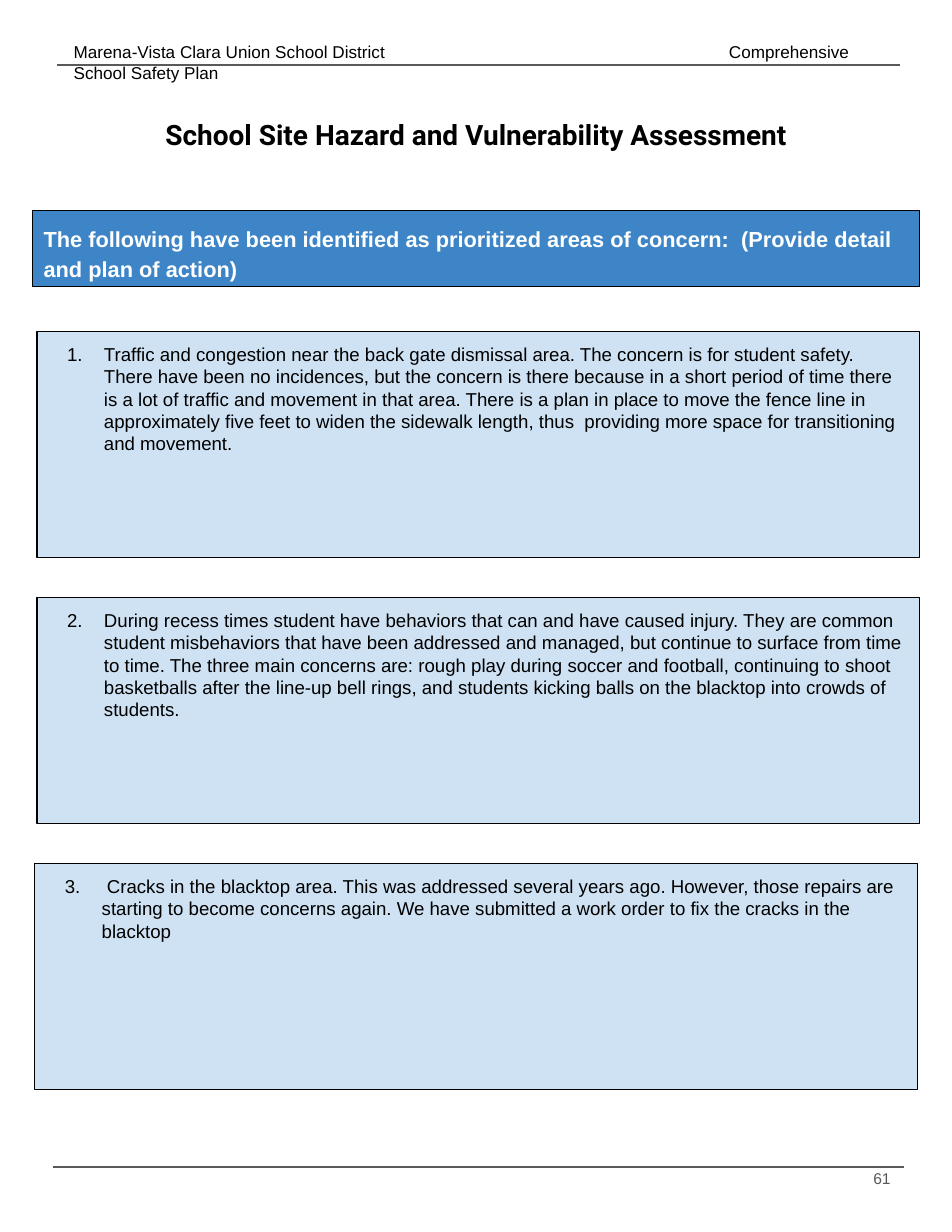
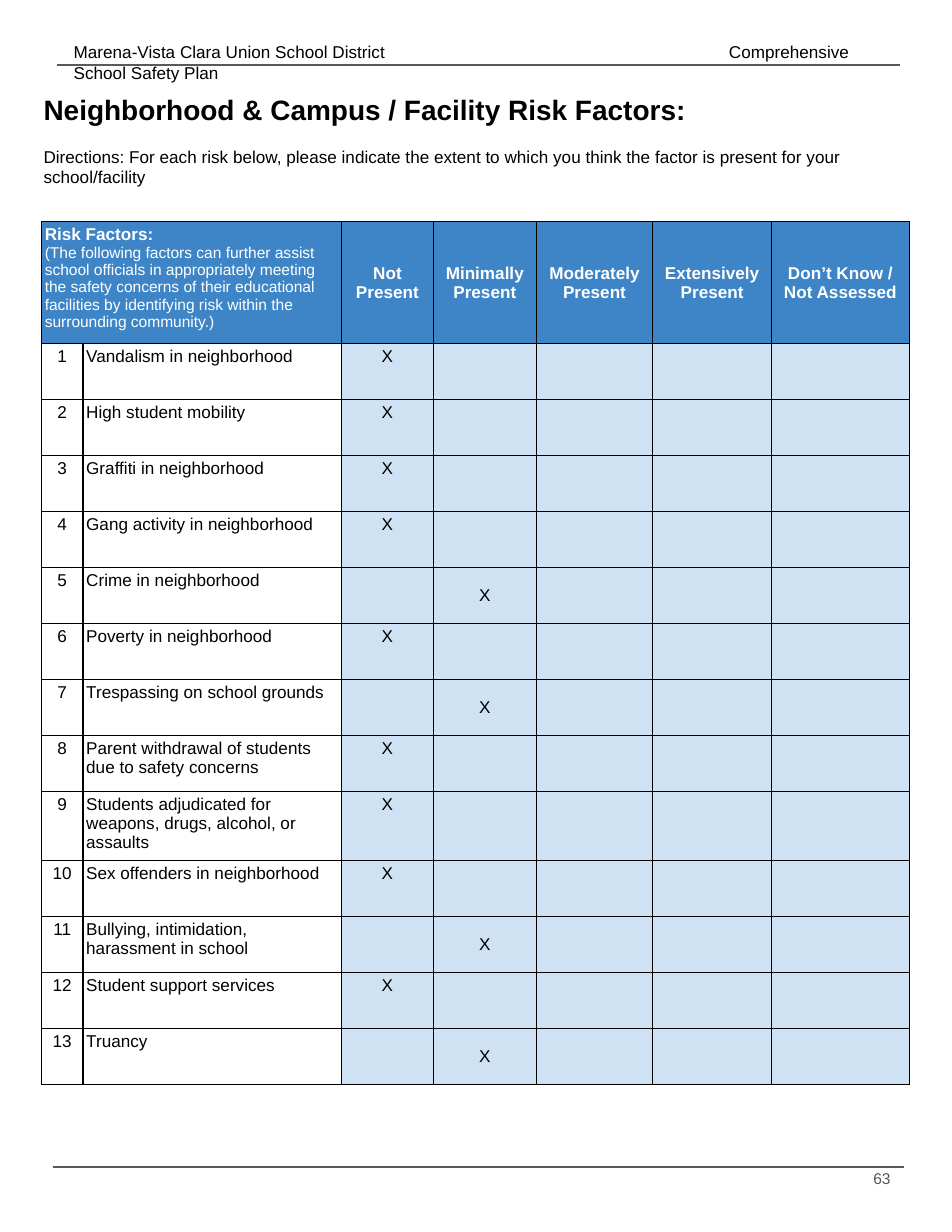
from dataclasses import dataclass

from lxml.etree import SubElement
from pptx import Presentation
from pptx.dml.color import RGBColor
from pptx.enum.shapes import MSO_CONNECTOR as Connector, MSO_SHAPE as Preset
from pptx.enum.text import MSO_ANCHOR as Anchor, PP_ALIGN as Align
from pptx.oxml.ns import qn
from pptx.util import Inches, Pt


@dataclass(frozen=True)
class Theme:
    font: str = "Arial"
    title_font: str = "Roboto"
    black: str = "000000"
    white: str = "FFFFFF"
    gray: str = "595959"
    blue: str = "3D85C6"
    pale: str = "CFE2F3"
    title: int = 18
    banner: int = 14
    body: int = 12
    label: int = 11
    small: int = 10
    line: float = 0.75
    border: int = 1


theme = Theme()


def write(frame, text, size=theme.label, color=theme.black, bold=False,
          font=theme.font, align=Align.LEFT, before=0, after=0, spacing=1.0):
    para = frame.paragraphs[0]
    if para.runs:
        para = frame.add_paragraph()
    para.alignment = align
    para.line_spacing = spacing
    para.space_before, para.space_after = Pt(before), Pt(after)
    span = para.add_run()
    span.text = text
    span.font.name, span.font.size, span.font.bold = font, Pt(size), bold
    span.font.color.rgb = RGBColor.from_string(color)
    return para


def add_box(page, left, top, width, height, fill=None):
    place = [Inches(length) for length in (left, top, width, height)]
    if fill:
        box = page.shapes.add_shape(Preset.RECTANGLE, *place)
        box.shadow.inherit = False
        box.fill.solid()
        box.fill.fore_color.rgb = RGBColor.from_string(fill)
        box.line.color.rgb = RGBColor.from_string(theme.black)
        box.line.width = Pt(theme.line)
    else:
        box = page.shapes.add_textbox(*place)
    frame = box.text_frame
    frame.word_wrap = True
    frame.vertical_anchor = Anchor.TOP
    frame.margin_left = frame.margin_right = Inches(0.1)
    frame.margin_top = frame.margin_bottom = Inches(0.1)
    return frame


deck = Presentation()
deck.slide_width, deck.slide_height = Inches(8.5), Inches(11)
blank = deck.slide_layouts[6]

pages = []
for number in ("61", "63"):
    page = deck.slides.add_slide(blank)
    header = add_box(page, 0.56, 0.27, 7.54, 0.39)
    para = write(header, "Marena-Vista Clara Union School District\tComprehensive School Safety Plan")
    tabs = SubElement(para._p.get_or_add_pPr(), qn("a:tabLst"))
    SubElement(tabs, qn("a:tab"), pos=str(Inches(5.85)), algn="l")
    for start, end, height in ((0.51, 8.04, 0.58), (0.47, 8.07, 10.42)):
        rule = page.shapes.add_connector(
            Connector.STRAIGHT, Inches(start), Inches(height), Inches(end), Inches(height))
        rule.line.color.rgb = RGBColor.from_string(theme.gray)
        rule.line.width = Pt(theme.line)
        SubElement(rule._element.spPr, qn("a:effectLst"))
    footer = add_box(page, 7.54, 10.35, 0.51, 0.46)
    write(footer, number, size=theme.small, color=theme.gray, align=Align.RIGHT)
    pages.append(page)

concern_page, risk_page = pages

title = add_box(concern_page, 0.29, 0.95, 7.92, 0.54)
write(title, "School Site Hazard and Vulnerability Assessment",
      size=theme.title, bold=True, font=theme.title_font, align=Align.CENTER)
banner = add_box(concern_page, 0.29, 1.88, 7.92, 0.68, theme.blue)
write(banner, "The following have been identified as prioritized areas of concern:  "
      "(Provide detail and plan of action)",
      size=theme.banner, color=theme.white, bold=True, spacing=1.15, after=16)

concerns = (
    (0.33, "Traffic and congestion near the back gate dismissal area. The concern is for "
     "student safety. There have been no incidences, but the concern is there because in a "
     "short period of time there is a lot of traffic and movement in that area. There is a "
     "plan in place to move the fence line in approximately five feet to widen the sidewalk "
     "length, thus  providing more space for transitioning and movement."),
    (0.33, "During recess times student have behaviors that can and have caused injury. They "
     "are common student misbehaviors that have been addressed and managed, but continue to "
     "surface from time to time. The three main concerns are: rough play during soccer and "
     "football, continuing to shoot basketballs after the line-up bell rings, and students "
     "kicking balls on the blacktop into crowds of students."),
    (0.31, " Cracks in the blacktop area. This was addressed several years ago. However, those "
     "repairs are starting to become concerns again. We have submitted a work order to fix "
     "the cracks in the blacktop"),
)
for index, (left, concern) in enumerate(concerns):
    card = add_box(concern_page, left, 2.96 + index * 2.375, 7.88, 2.02, theme.pale)
    para = write(card, concern, size=theme.body)
    layout = para._p.get_or_add_pPr()
    layout.set("marL", str(Inches(0.5)))
    layout.set("indent", str(Inches(-0.33)))
    SubElement(layout, qn("a:buAutoNum"), type="arabicPeriod", startAt=str(index + 1))

not_present, minimal = 2, 3
risks = (
    ("Vandalism in neighborhood", not_present),
    ("High student mobility", not_present),
    ("Graffiti in neighborhood", not_present),
    ("Gang activity in neighborhood", not_present),
    ("Crime in neighborhood", minimal),
    ("Poverty in neighborhood", not_present),
    ("Trespassing on school grounds", minimal),
    ("Parent withdrawal of students due to safety concerns", not_present),
    ("Students adjudicated for weapons, drugs, alcohol, or assaults", not_present),
    ("Sex offenders in neighborhood", not_present),
    ("Bullying, intimidation, harassment in school", minimal),
    ("Student support services", not_present),
    ("Truancy", minimal),
)
ratings = ("Not Present", "Minimally Present", "Moderately Present",
           "Extensively Present", "Don’t Know / Not Assessed")
widths = (0.37, 2.31, 0.82, 0.92, 1.04, 1.06, 1.23)
heights = (1.09,) + (0.5,) * len(risks)

table = risk_page.shapes.add_table(
    len(heights), len(widths), Inches(0.37), Inches(1.98),
    Inches(sum(widths)), Inches(sum(heights))).table
for column, width in zip(table.columns, widths):
    column.width = Inches(width)
for row, height in zip(table.rows, heights):
    row.height = Inches(height)

for row_index in range(len(heights)):
    for column_index in range(len(widths)):
        cell = table.cell(row_index, column_index)
        cell.margin_left = cell.margin_right = Inches(0.03)
        cell.margin_top = cell.margin_bottom = Inches(0.03)
        shade = theme.blue if row_index == 0 else theme.pale if column_index > 1 else theme.white
        edges = cell._tc.get_or_add_tcPr()
        for side in ("a:lnL", "a:lnR", "a:lnT", "a:lnB"):
            edge = SubElement(edges, qn(side), w=str(Pt(theme.border)))
            ink = SubElement(edge, qn("a:solidFill"))
            SubElement(ink, qn("a:srgbClr"), val=theme.black)
        cell.fill.solid()
        cell.fill.fore_color.rgb = RGBColor.from_string(shade)

corner = table.cell(0, 0)
corner.merge(table.cell(0, 1))
write(corner.text_frame, "Risk Factors:", color=theme.white, bold=True)
write(corner.text_frame, "(The following factors can further assist school officials in "
      "appropriately meeting the safety concerns of their educational facilities by "
      "identifying risk within the surrounding community.)",
      size=theme.small, color=theme.white)
for column_index, rating in enumerate(ratings, 2):
    cell = table.cell(0, column_index)
    cell.vertical_anchor = Anchor.MIDDLE
    write(cell.text_frame, rating, color=theme.white, bold=True, align=Align.CENTER)
for row_index, (risk, answer) in enumerate(risks, 1):
    write(table.cell(row_index, 0).text_frame, str(row_index), align=Align.CENTER)
    write(table.cell(row_index, 1).text_frame, risk)
    mark = table.cell(row_index, answer)
    mark.vertical_anchor = Anchor.MIDDLE if answer == minimal else Anchor.TOP
    write(mark.text_frame, "X", align=Align.CENTER)

title = add_box(risk_page, 0.29, 0.73, 7.92, 0.97)
write(title, "Neighborhood & Campus / Facility Risk Factors:", size=theme.title, bold=True)
write(title, "Directions: For each risk below, please indicate the extent to which you think "
      "the factor is present for your school/facility", before=12.65)

deck.save("out.pptx")
